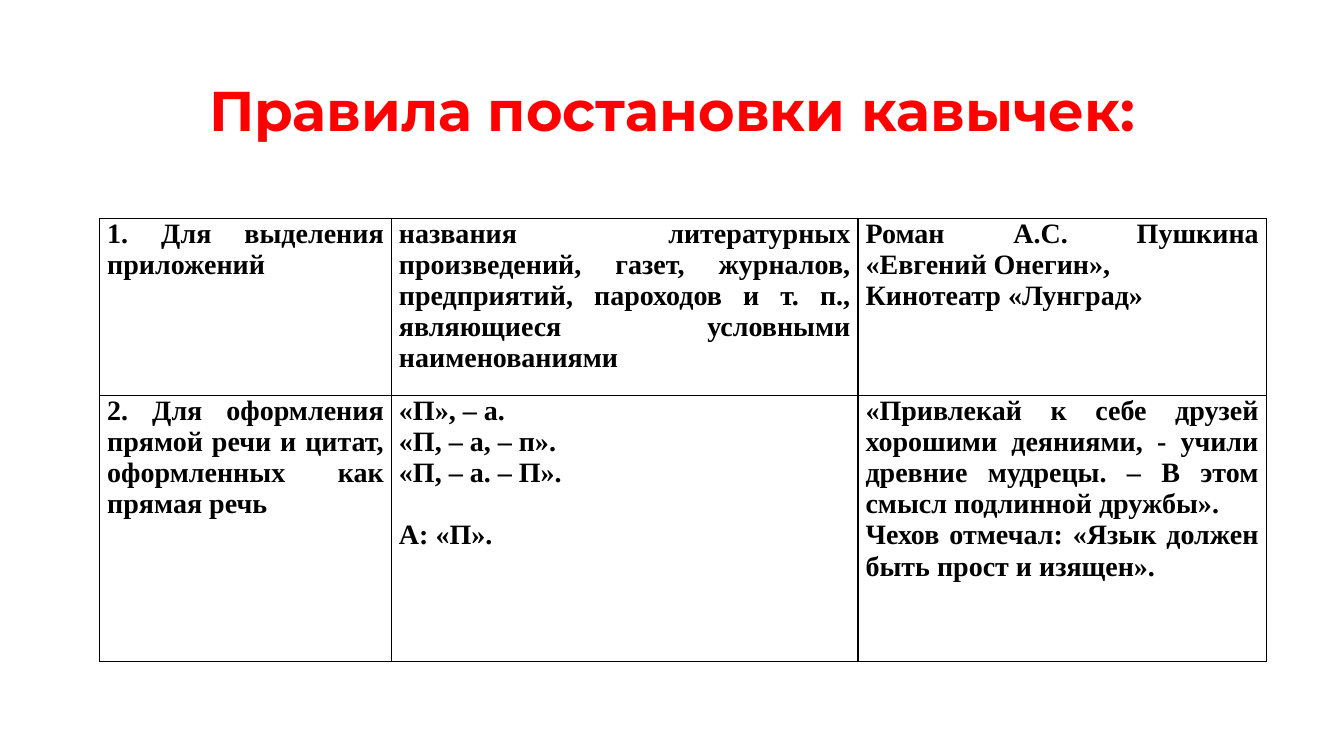
from pptx import Presentation
from pptx.dml.color import RGBColor
from pptx.enum import text as t
from pptx.oxml import parse_xml
from pptx.oxml.ns import nsdecls
from pptx.util import Pt

RED = RGBColor(255, 0, 0)
BLACK = RGBColor(0, 0, 0)
WHITE = RGBColor(255, 255, 255)

GAP = 22  # one line of table text

# Each cell is a list of (space before, text)
RULES = [
    [
        [(0, "1. Для выделения приложений")],
        [(0, "названия литературных произведений, газет, журналов, "
             "предприятий, пароходов и т. п., являющиеся условными "
             "наименованиями")],
        [(0, "Роман А.С. Пушкина «Евгений Онегин»,"),
         (0, "Кинотеатр «Лунград»")],
    ],
    [
        [(0, "2. Для оформления прямой речи и цитат, "
             "оформленных как прямая речь")],
        [(0, "«П», – а."),
         (0, "«П, – а, – п»."),
         (0, "«П, – а. – П»."),
         (GAP, "А: «П».")],
        [(0, "«Привлекай к себе друзей хорошими деяниями, - учили "
             "древние мудрецы. – В этом смысл подлинной дружбы»."),
         (0, "Чехов отмечал: «Язык должен быть прост и изящен».")],
    ],
]


class Page:
    head = "Montserrat"
    body = "Times New Roman"

    def __init__(self, deck):
        self.slide = deck.slides.add_slide(deck.slide_layouts[5])

    def run(self, para, words, font, size, color):
        run = para.add_run()
        run.text = words
        run.font.name = font
        run.font.size = Pt(size)
        run.font.bold = True
        run.font.color.rgb = color

    def title(self, words, left, top, width, height):
        box = self.slide.shapes.title
        box.left, box.top = Pt(left), Pt(top)
        box.width, box.height = Pt(width), Pt(height)
        frame = box.text_frame
        frame.word_wrap = True
        frame.vertical_anchor = t.MSO_ANCHOR.MIDDLE
        para = frame.paragraphs[0]
        para.alignment = t.PP_ALIGN.CENTER
        para.line_spacing = 0.9
        self.run(para, words, self.head, 40, RED)

    def border(self, cell):
        props = cell._tc.get_or_add_tcPr()
        for i, side in enumerate(("lnL", "lnR", "lnT", "lnB")):
            line = parse_xml(
                f'<a:{side} {nsdecls("a")} w="{Pt(1)}"><a:solidFill>'
                f'<a:srgbClr val="{BLACK}"/></a:solidFill></a:{side}>')
            props.insert(i, line)

    def cell(self, cell, lines):
        cell.margin_left = cell.margin_right = Pt(5.4)
        cell.margin_top = cell.margin_bottom = 0
        cell.fill.solid()
        cell.fill.fore_color.rgb = WHITE
        self.border(cell)
        frame = cell.text_frame
        for i, (gap, words) in enumerate(lines):
            para = frame.add_paragraph() if i else frame.paragraphs[0]
            para.alignment = t.PP_ALIGN.JUSTIFY
            para.space_before = Pt(gap)
            self.run(para, words, self.body, 20, BLACK)

    def table(self, rows, left, top, widths, heights):
        grid = self.slide.shapes.add_table(
            len(heights), len(widths), Pt(left), Pt(top),
            Pt(sum(widths)), Pt(sum(heights))).table
        grid.first_row = grid.horz_banding = False
        for col, width in zip(grid.columns, widths):
            col.width = Pt(width)
        for row, height, cells in zip(grid.rows, heights, rows):
            row.height = Pt(height)
            for cell, lines in zip(row.cells, cells):
                self.cell(cell, lines)


def main():
    deck = Presentation()
    deck.slide_width, deck.slide_height = Pt(960), Pt(540)
    page = Page(deck)

    # Heading
    page.title("Правила постановки кавычек:", 66, 28.75, 828, 104.4)

    # Table of rules
    page.table(RULES, 71.2, 156, (208.4, 333.3, 291.6), (126.6, 190))

    deck.save("out.pptx")


if __name__ == "__main__":
    main()
